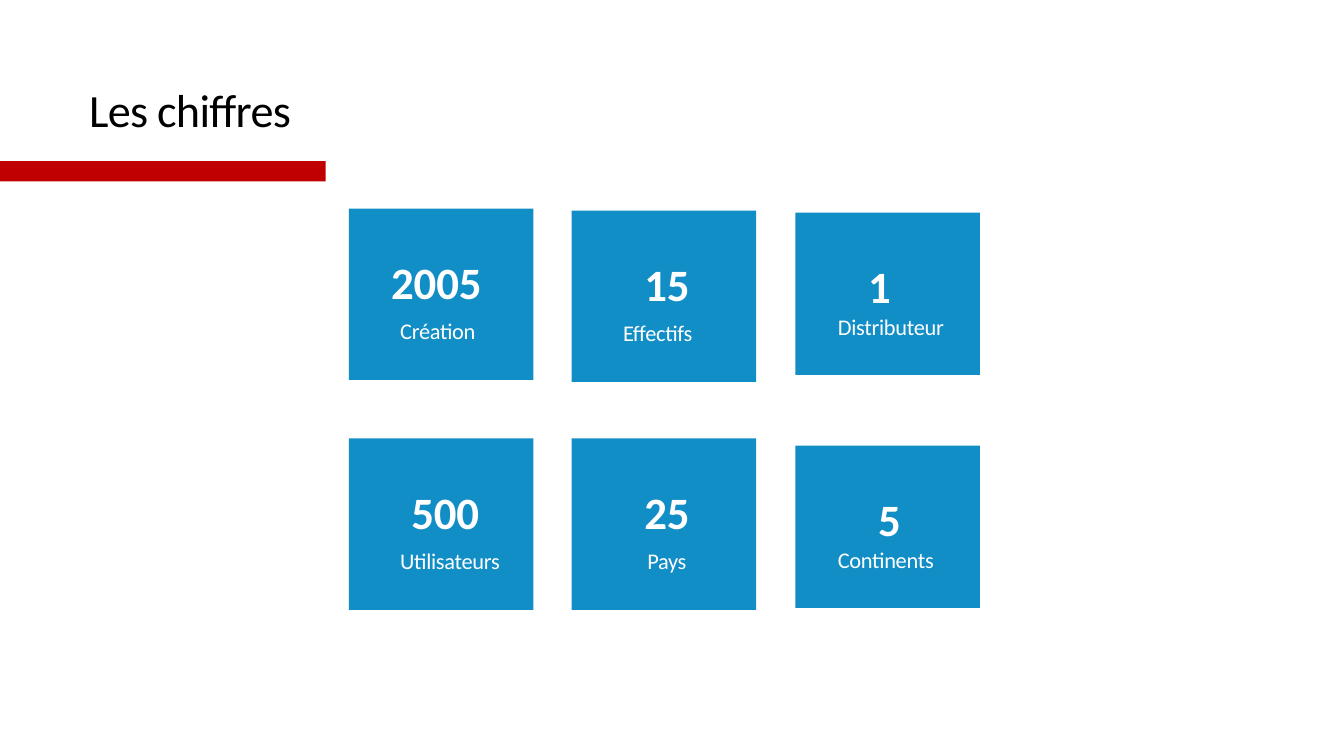
from pptx import Presentation
from pptx.dml.color import RGBColor
from pptx.enum.shapes import MSO_SHAPE
from pptx.enum.text import MSO_ANCHOR, PP_ALIGN
from pptx.util import Pt

PIXEL = 9144  # 100 px to the inch

RED = "C00000"
BLUE = "128EC7"
WHITE = "FFFFFF"
BLACK = "000000"

COLUMN_LEFTS = [346, 567, 789]
TILE_WIDTH = 183
TALL, SHORT = 170, 161

# column, top, height, number, number indent, label, label indent, gap in points
TILES = [
    (0, 207, TALL, "2005", 42, "Création", 51, 5.8),
    (1, 209, TALL, "15", 72, "Effectifs", 51, 5.8),
    (2, 211, SHORT, "1", 72, "Distributeur", 42, 0),
    (0, 435, TALL, "500", 62, "Utilisateurs", 51, 5.8),
    (1, 435, TALL, "25", 72, "Pays", 75, 5.8),
    (2, 442, SHORT, "5", 82, "Continents", 42, 0),
]


def px(length):
    return length * PIXEL


def color(hex_code):
    return RGBColor.from_string(hex_code)


def add_rectangle(slide, left, top, width, height, fill):
    shape = slide.shapes.add_shape(
        MSO_SHAPE.RECTANGLE, px(left), px(top), px(width), px(height))
    shape.shadow.inherit = False
    shape.fill.solid()
    shape.fill.fore_color.rgb = color(fill)
    shape.line.fill.background()
    return shape


def prepare_frame(shape, anchor, margin_top):
    frame = shape.text_frame
    frame.word_wrap = True
    frame.vertical_anchor = anchor
    frame.margin_left = frame.margin_right = frame.margin_bottom = 0
    frame.margin_top = px(margin_top)
    return frame


def write(paragraph, text, *, size, fill, bold=False, spacing=0,
          indent=0, space_before=0, align=PP_ALIGN.LEFT):
    """Fill a paragraph; spacing is the letter spacing in hundredths of a point."""
    paragraph.alignment = align
    paragraph._p.get_or_add_pPr().set("marL", str(px(indent)))
    if space_before:
        paragraph.space_before = Pt(space_before)
    run = paragraph.add_run()
    run.text = text
    run.font.name = "Calibri"
    run.font.size = Pt(size)
    run.font.bold = bold
    run.font.color.rgb = color(fill)
    run._r.get_or_add_rPr().set("spc", str(spacing))


def add_title(slide, text):
    box = slide.shapes.add_textbox(px(53), px(79), px(270), px(57))
    frame = prepare_frame(box, MSO_ANCHOR.BOTTOM, margin_top=1)
    write(frame.paragraphs[0], text, size=33, fill=BLACK, spacing=-50,
          indent=1, align=PP_ALIGN.CENTER)


def add_tile(slide, column, top, height, number, number_indent,
             label, label_indent, gap):
    tile = add_rectangle(
        slide, COLUMN_LEFTS[column], top, TILE_WIDTH, height, BLUE)
    frame = prepare_frame(tile, MSO_ANCHOR.TOP, margin_top=46)
    write(frame.paragraphs[0], number, size=32, fill=WHITE, bold=True,
          spacing=-10, indent=number_indent)
    write(frame.add_paragraph(), label, size=16, fill=WHITE, spacing=-20,
          indent=label_indent, space_before=gap)


def main():
    presentation = Presentation()
    presentation.slide_width = px(1333)
    presentation.slide_height = px(750)
    slide = presentation.slides.add_slide(presentation.slide_layouts[6])
    add_rectangle(slide, 0, 160, 323, 20, RED)
    add_title(slide, "Les chiffres")
    for tile in TILES:
        add_tile(slide, *tile)
    presentation.save("out.pptx")


if __name__ == "__main__":
    main()
